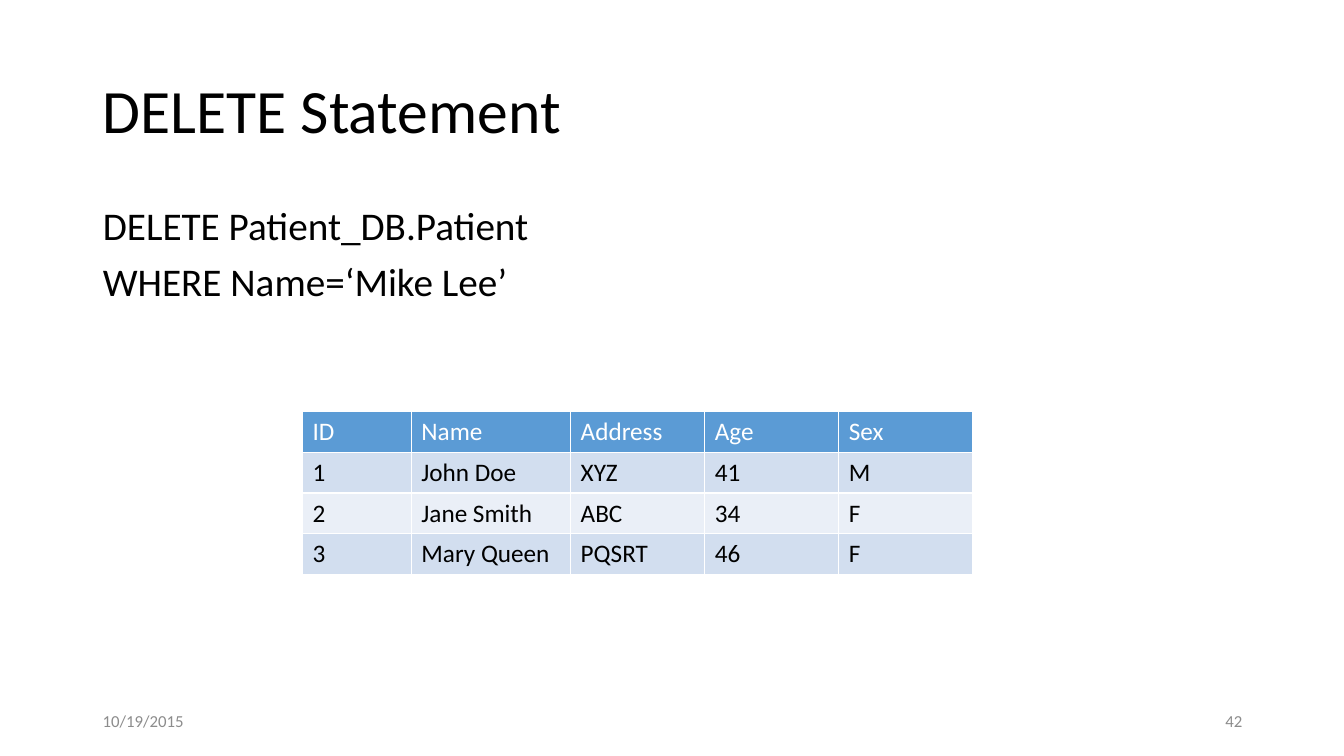
from pptx import Presentation
from pptx.dml.color import RGBColor
from pptx.enum.text import MSO_ANCHOR, PP_ALIGN
from pptx.oxml.ns import qn
from pptx.util import Inches, Pt

LEFT, RIGHT = PP_ALIGN.LEFT, PP_ALIGN.RIGHT
TOP, MIDDLE = MSO_ANCHOR.TOP, MSO_ANCHOR.MIDDLE
FONT = "Calibri"
COLORS = {
    "text": "000000",
    "footer": "8C8C8C",
    "header_text": "FFFFFF",
    "header": "5B9BD5",
    "odd_row": "D2DEEF",
    "even_row": "EAEFF7",
}
MARGIN = 0.92
CONTENT_WIDTH = 11.5
FOOTER_WIDTH = 3


def place(shape, left, top, width, height):
    shape.left, shape.top = Inches(left), Inches(top)
    shape.width, shape.height = Inches(width), Inches(height)


def write(frame, lines, size, color, align=LEFT, anchor=TOP):
    """Fill a text frame with one paragraph per line and return the paragraphs."""
    frame.word_wrap = True
    frame.vertical_anchor = anchor
    for index, line in enumerate(lines):
        paragraph = frame.add_paragraph() if index else frame.paragraphs[0]
        paragraph.alignment = align
        run = paragraph.add_run()
        run.text = line
        run.font.name = FONT
        run.font.size = Pt(size)
        run.font.bold = False
        run.font.color.rgb = RGBColor.from_string(COLORS[color])
    return frame.paragraphs


presentation = Presentation()
presentation.slide_width = Inches(13.33)
presentation.slide_height = Inches(7.5)
slide = presentation.slides.add_slide(presentation.slide_layouts[1])

# Title and statement
title, body = slide.placeholders
place(title, MARGIN, 0.4, CONTENT_WIDTH, 1.45)
for paragraph in write(title.text_frame, ["DELETE Statement"], 44, "text", anchor=MIDDLE):
    paragraph.line_spacing = 0.9

place(body, MARGIN, 2, CONTENT_WIDTH, 4.76)
statement = ["DELETE Patient_DB.Patient", "WHERE Name=‘Mike Lee’"]
for paragraph in write(body.text_frame, statement, 28, "text"):
    paragraph.line_spacing = 0.9
    paragraph.space_before = Pt(10)
    properties = paragraph._p.get_or_add_pPr()
    properties.set("marL", "0")
    properties.set("indent", "0")
    properties.append(properties.makeelement(qn("a:buNone"), {}))

# Patient table
patients = [
    ["ID", "Name", "Address", "Age", "Sex"],
    ["1", "John Doe", "XYZ", "41", "M"],
    ["2", "Jane Smith", "ABC", "34", "F"],
    ["3", "Mary Queen", "PQSRT", "46", "F"],
]
column_widths = [1.08, 1.58, 1.33, 1.33, 1.33]
row_height = 0.405
table = slide.shapes.add_table(
    len(patients), len(column_widths), Inches(3), Inches(4.08),
    Inches(sum(column_widths)), Inches(row_height * len(patients)),
).table
for column, width in zip(table.columns, column_widths):
    column.width = Inches(width)
for row_index, values in enumerate(patients):
    if row_index == 0:
        fill, color = "header", "header_text"
    else:
        fill, color = ("odd_row" if row_index % 2 else "even_row"), "text"
    for column_index, value in enumerate(values):
        cell = table.cell(row_index, column_index)
        cell.fill.solid()
        cell.fill.fore_color.rgb = RGBColor.from_string(COLORS[fill])
        write(cell.text_frame, [value], 18, color)

# Date and slide number
for text, left, align in [
    ("10/19/2015", MARGIN, LEFT),
    ("42", MARGIN + CONTENT_WIDTH - FOOTER_WIDTH, RIGHT),
]:
    footer = slide.shapes.add_textbox(
        Inches(left), Inches(6.95), Inches(FOOTER_WIDTH), Inches(0.4))
    write(footer.text_frame, [text], 12, "footer", align, MIDDLE)

presentation.save("out.pptx")
